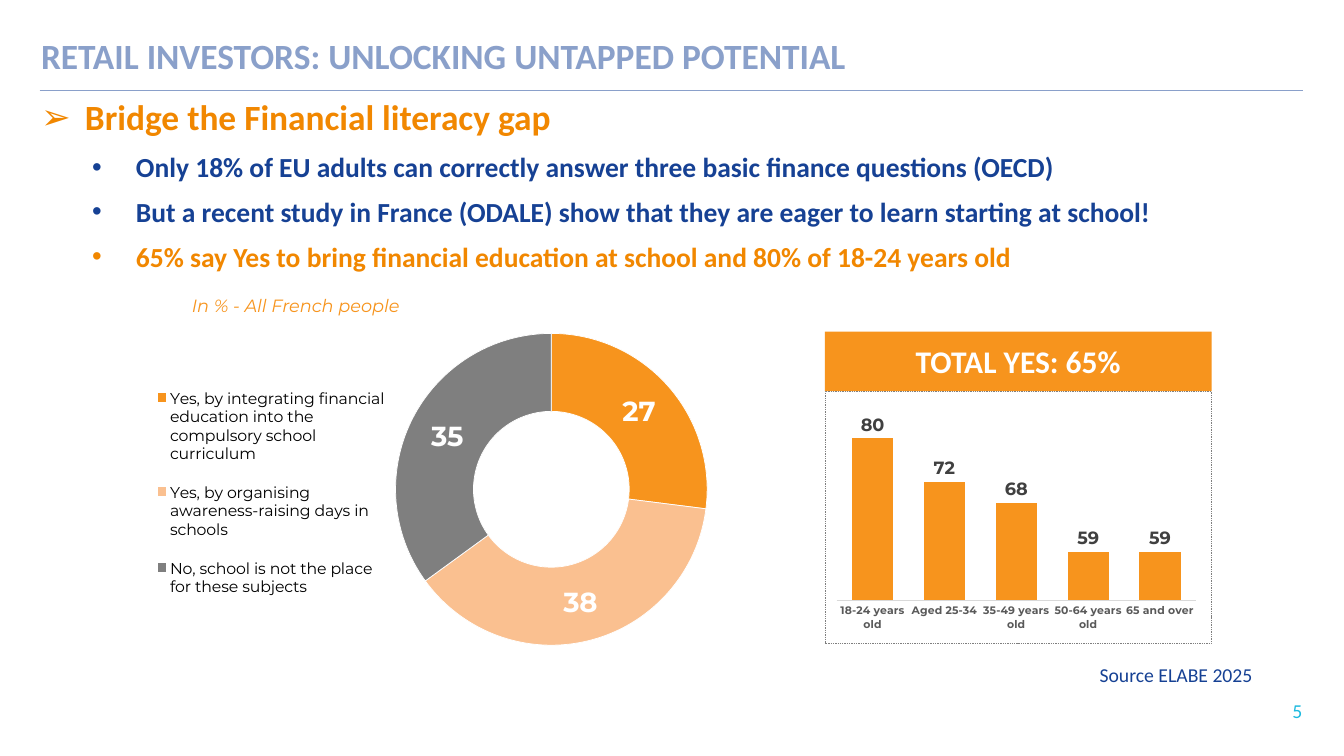
from lxml import etree
from pptx import Presentation
from pptx.chart.data import CategoryChartData
from pptx.dml.color import RGBColor
from pptx.enum.chart import XL_CHART_TYPE, XL_LABEL_POSITION, XL_LEGEND_POSITION, XL_TICK_MARK
from pptx.enum.shapes import MSO_CONNECTOR, MSO_SHAPE
from pptx.enum.text import MSO_ANCHOR, PP_ALIGN
from pptx.oxml import parse_xml
from pptx.oxml.ns import nsdecls, qn
from pptx.util import Inches, Pt

DOUGHNUT = XL_CHART_TYPE.DOUGHNUT
COLUMN = XL_CHART_TYPE.COLUMN_CLUSTERED
OUTSIDE_END = XL_LABEL_POSITION.OUTSIDE_END
LEGEND_TOP = XL_LEGEND_POSITION.TOP
NO_TICK = XL_TICK_MARK.NONE
STRAIGHT = MSO_CONNECTOR.STRAIGHT
RECTANGLE = MSO_SHAPE.RECTANGLE
TOP, MIDDLE = MSO_ANCHOR.TOP, MSO_ANCHOR.MIDDLE
LEFT, CENTER, RIGHT = PP_ALIGN.LEFT, PP_ALIGN.CENTER, PP_ALIGN.RIGHT

PERIWINKLE, NAVY, CYAN = "8AA0CA", "164194", "1DBADF"
HEADING_ORANGE, ORANGE, PEACH = "F18700", "F7941D", "FAC090"
WHITE, BLACK, GREY = "FFFFFF", "000000", "7F7F7F"
TEXT_FONT, CHART_FONT = "Calibri", "Montserrat"


def color(value):
    return RGBColor.from_string(value)


def style_font(font, size, ink, name=TEXT_FONT, bold=False, italic=False):
    font.size = Pt(size)
    font.name = name
    font.bold = bold
    font.italic = italic
    font.color.rgb = color(ink)


def write(paragraph, text, align=LEFT, margin=0, hanging=0, bullet=None,
          line_spacing=1, before=0, after=0, **font):
    """Fill a paragraph; margin and hanging indent are in inches."""
    properties = paragraph._p.get_or_add_pPr()
    properties.set("marL", str(Inches(margin)))
    properties.set("indent", str(-Inches(hanging)))
    if bullet:
        etree.SubElement(properties, qn("a:buFont")).set("typeface", "Arial")
        etree.SubElement(properties, qn("a:buChar")).set("char", bullet)
    paragraph.alignment = align
    paragraph.line_spacing = line_spacing
    paragraph.space_before = Pt(before)
    paragraph.space_after = Pt(after)
    run = paragraph.add_run()
    run.text = text
    style_font(run.font, **font)


def manual_layout(x, y, width, height, inner=False):
    """Return a chart layout given as fractions of the chart."""
    target = '<c:layoutTarget val="inner"/>' if inner else ""
    return parse_xml(
        f'<c:layout {nsdecls("c")}><c:manualLayout>{target}'
        '<c:xMode val="edge"/><c:yMode val="edge"/>'
        f'<c:x val="{x}"/><c:y val="{y}"/><c:w val="{width}"/><c:h val="{height}"/>'
        '</c:manualLayout></c:layout>')


class SlideBuilder:
    def __init__(self, slide):
        self.slide = slide

    def text(self, box, paragraphs, inset=(0, 0), anchor=TOP):
        shape = self.slide.shapes.add_textbox(*map(Inches, box))
        frame = shape.text_frame
        frame.word_wrap = True
        frame.vertical_anchor = anchor
        frame.margin_left = frame.margin_right = Inches(inset[0])
        frame.margin_top = frame.margin_bottom = Inches(inset[1])
        for index, (text, style) in enumerate(paragraphs):
            paragraph = frame.add_paragraph() if index else frame.paragraphs[0]
            write(paragraph, text, **style)

    def rule(self, start, end, ink, width):
        line = self.slide.shapes.add_connector(STRAIGHT, *map(Inches, start + end))
        line.line.color.rgb = color(ink)
        line.line.width = Pt(width)
        etree.SubElement(line._element.spPr, qn("a:effectLst"))

    def banner(self, box, text, fill, **style):
        shape = self.slide.shapes.add_shape(RECTANGLE, *map(Inches, box))
        shape.shadow.inherit = False
        shape.fill.solid()
        shape.fill.fore_color.rgb = color(fill)
        shape.line.fill.background()
        shape.text_frame.vertical_anchor = MIDDLE
        write(shape.text_frame.paragraphs[0], text, **style)

    def chart(self, kind, box, values, plot_box, label_size, label_ink, label_format):
        """Add a one-series chart with value labels; values maps category to number."""
        data = CategoryChartData()
        data.categories = list(values)
        data.add_series("Series 1", list(values.values()))
        chart = self.slide.shapes.add_chart(kind, *map(Inches, box), data).chart
        chart.has_title = False
        chart.has_legend = False
        style_font(chart.font, 10, BLACK, CHART_FONT)
        plot_area = chart.element.find(".//" + qn("c:plotArea"))
        for layout in plot_area.findall(qn("c:layout")):
            plot_area.remove(layout)
        plot_area.insert(0, manual_layout(*plot_box, inner=True))
        plot = chart.plots[0]
        plot.has_data_labels = True
        labels = plot.data_labels
        labels.show_value = True
        labels.show_percentage = False
        labels.number_format = label_format
        labels.number_format_is_linked = False
        style_font(labels.font, label_size, label_ink, CHART_FONT, bold=True)
        return chart

    def doughnut(self, box, values, colors, plot_box, legend_box):
        chart = self.chart(DOUGHNUT, box, values, plot_box, 28, WHITE, "0;0;\\ ")
        chart.plots[0].vary_by_categories = True
        chart.element.find(".//" + qn("c:holeSize")).set("val", "55")
        for index, fill in enumerate(colors):
            point = chart.plots[0].series[0].points[index].format
            point.fill.solid()
            point.fill.fore_color.rgb = color(fill)
            point.line.color.rgb = color(WHITE)
            point.line.width = Pt(0.75)
        chart.has_legend = True
        legend = chart.legend
        legend.position = LEGEND_TOP
        legend.include_in_layout = False
        style_font(legend.font, 16, BLACK, CHART_FONT)
        chart.element.find(".//" + qn("c:legendPos")).addnext(manual_layout(*legend_box))

    def columns(self, box, values, fill, plot_box):
        chart = self.chart(COLUMN, box, values, plot_box, 18, "404040", "0")
        plot = chart.plots[0]
        plot.vary_by_categories = False
        plot.gap_width = 75
        plot.data_labels.position = OUTSIDE_END
        bars = plot.series[0].format
        bars.fill.solid()
        bars.fill.fore_color.rgb = color(fill)
        scale = chart.value_axis
        scale.minimum_scale, scale.maximum_scale = 50, 85
        scale.has_major_gridlines = False
        scale.visible = False
        ages = chart.category_axis
        ages.major_tick_mark = ages.minor_tick_mark = NO_TICK
        ages.format.line.color.rgb = color("D9D9D9")
        ages.format.line.width = Pt(0.75)
        style_font(ages.tick_labels.font, 11, "595959", CHART_FONT, bold=True)
        chart.element.find(qn("c:chart")).addnext(parse_xml(
            f'<c:spPr {nsdecls("c", "a")}><a:noFill/><a:ln w="{Pt(0.25)}"><a:solidFill>'
            f'<a:srgbClr val="{GREY}"/></a:solidFill><a:prstDash val="dash"/></a:ln></c:spPr>'))


def main():
    presentation = Presentation()
    presentation.slide_width = Inches(18.98)
    presentation.slide_height = Inches(10.67)
    builder = SlideBuilder(presentation.slides.add_slide(presentation.slide_layouts[6]))

    builder.rule((0.56, 1.28), (18.4, 1.28), PERIWINKLE, 1.5)
    builder.text((0.58, 0.48, 17.82, 0.61), [
        ("RETAIL INVESTORS: UNLOCKING UNTAPPED POTENTIAL",
         dict(size=36, ink=PERIWINKLE, bold=True))])
    builder.text((17.71, 9.86, 0.68, 0.34), [
        ("5", dict(size=20, ink=CYAN, align=RIGHT))], anchor=MIDDLE)

    heading = dict(size=36, ink=HEADING_ORANGE, bold=True, bullet="➢",
                   margin=0.62, hanging=0.62, line_spacing=0.9, after=6)
    point = dict(size=28, ink=NAVY, bold=True, bullet="•",
                 margin=1.34, hanging=0.62, before=6, after=6)
    caption = dict(size=18, ink=ORANGE, name=CHART_FONT, italic=True,
                   margin=2.13, before=16, after=6)
    builder.text((0.58, 1.41, 17.51, 3.19), [
        ("Bridge the Financial literacy gap", heading),
        ("Only 18% of EU adults can correctly answer three basic finance questions (OECD)", point),
        ("But a recent study in France (ODALE) show that they are eager to learn "
         "starting at school!", point),
        ("65% say Yes to bring financial education at school and 80% of 18-24 years old",
         point | dict(ink=HEADING_ORANGE)),
        ("In % - All French people", caption)])

    answers = {
        "Yes, by integrating financial education into the compulsory school curriculum": 27,
        "Yes, by organising awareness-raising days in schools": 38,
        "No, school is not the place for these subjects": 35}
    builder.doughnut((1.87, 4.6, 9.78, 5.07), answers, (ORANGE, PEACH, GREY),
                     plot_box=(0.38, 0, 0.45, 0.91), legend_box=(0.03, 0.12, 0.34, 0.69))

    builder.banner((11.65, 4.68, 5.46, 0.84), "TOTAL YES: 65%", ORANGE,
                   size=32, ink=WHITE, bold=True, align=CENTER)
    yes_by_age = {"18-24 years old": 80, "Aged 25-34": 72, "35-49 years old": 68,
                  "50-64 years old": 59, "65 and over": 59}
    builder.columns((11.65, 5.52, 5.46, 3.56), yes_by_age, ORANGE,
                    plot_box=(0.03, 0.08, 0.93, 0.75))
    builder.text((15.43, 9.31, 2.97, 0.44), [
        ("Source ELABE 2025", dict(size=20, ink=NAVY))], inset=(0.1, 0.05))

    presentation.save("out.pptx")


if __name__ == "__main__":
    main()
